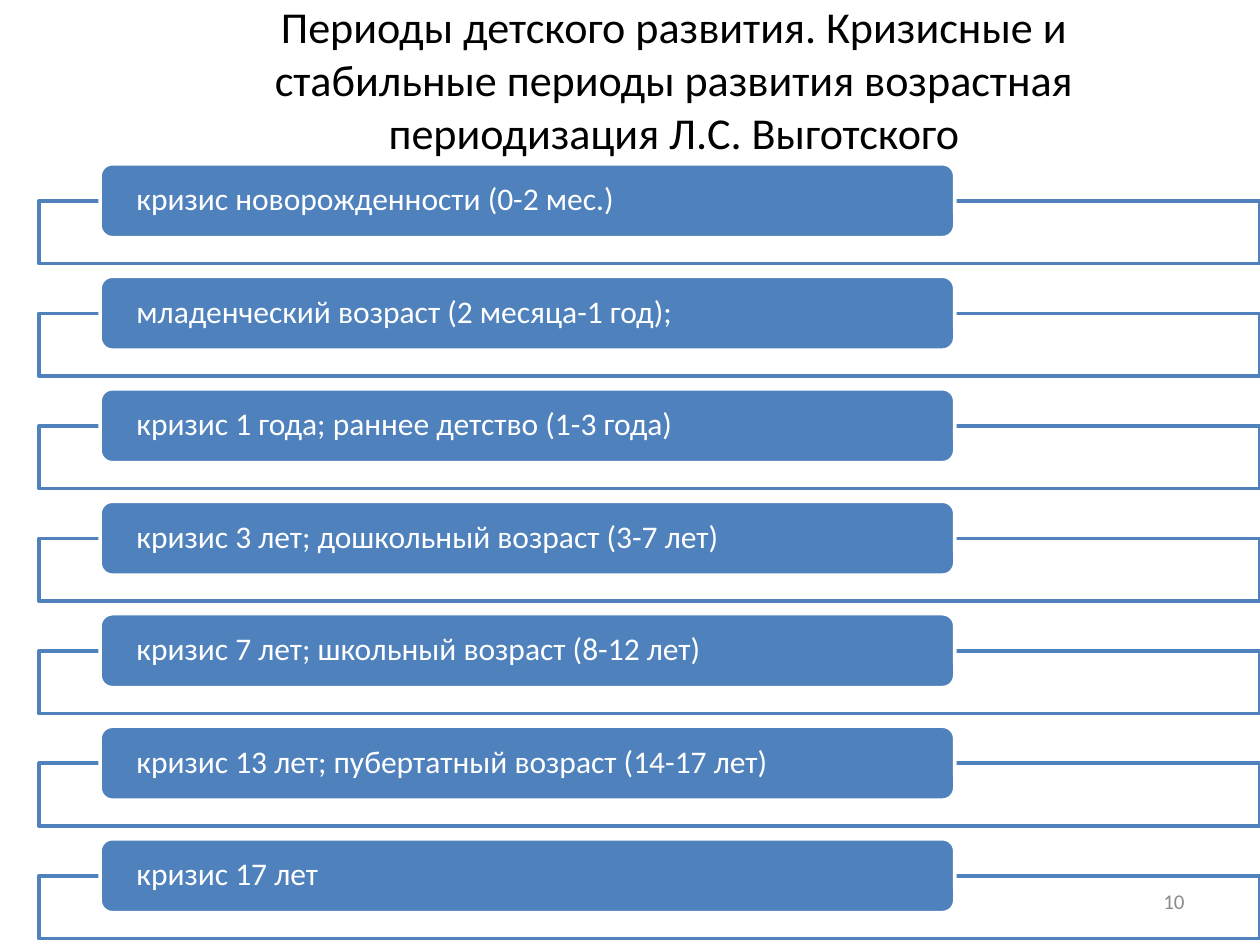
from lxml.etree import SubElement
from pptx import Presentation
from pptx.dml.color import RGBColor
from pptx.enum.shapes import MSO_SHAPE
from pptx.enum.text import MSO_ANCHOR, PP_ALIGN
from pptx.oxml.ns import qn
from pptx.util import Inches, Pt

BLUE = RGBColor(0x4F, 0x81, 0xBD)
WHITE = RGBColor(0xFF, 0xFF, 0xFF)
BLACK = RGBColor(0, 0, 0)
GREY = RGBColor(0x8C, 0x8C, 0x8C)
FONT = "Calibri"

TITLE = ("Периоды детского развития. Кризисные и стабильные периоды развития "
         "возрастная периодизация Л.С. Выготского")
PERIODS = [
    "кризис новорожденности (0-2 мес.)",
    "младенческий возраст (2 месяца-1 год);",
    "кризис 1 года; раннее детство (1-3 года)",
    "кризис 3 лет; дошкольный возраст (3-7 лет)",
    "кризис 7 лет; школьный возраст (8-12 лет)",
    "кризис 13 лет; пубертатный возраст (14-17 лет)",
    "кризис 17 лет",
]


def write(s, text, size, color, align):
    tf = s.text_frame
    tf.word_wrap = True
    tf.vertical_anchor = MSO_ANCHOR.MIDDLE
    p = tf.paragraphs[0]
    p.text = text
    p.alignment = align
    p.font.name, p.font.size, p.font.color.rgb = FONT, Pt(size), color
    return tf


def add_text(slide, box, text, size, color, align):
    write(slide.shapes.add_textbox(*map(Inches, box)), text, size, color, align)


def add_box(slide, kind, box, fill, line):
    s = slide.shapes.add_shape(kind, *map(Inches, box))
    s.shadow.inherit = False
    s.fill.solid()
    s.fill.fore_color.rgb = fill
    s.line.color.rgb = line
    s.line.width = Pt(2)
    return s


def add_period(slide, box, text):
    """An open frame with a label bar that overlaps its top edge."""
    left, top, width, height = box
    label_h = height * 0.74
    frame_top = label_h / 2
    frame = add_box(slide, MSO_SHAPE.RECTANGLE,
                    (left, top + frame_top, width, height - frame_top), WHITE, BLUE)
    color = frame.fill._xPr.find(qn("a:solidFill"))[0]
    SubElement(color, qn("a:alpha")).set("val", "90000")

    label = add_box(slide, MSO_SHAPE.ROUNDED_RECTANGLE,
                    (left + width * 0.05, top, width * 0.7, label_h), BLUE, WHITE)
    tf = write(label, text, 18, WHITE, PP_ALIGN.LEFT)
    tf.margin_left = tf.margin_right = Inches(0.26)
    tf.margin_top = tf.margin_bottom = 0
    tf.paragraphs[0].line_spacing = 0.9


def add_period_list(slide, box, periods, gap):
    left, top, width, height = box
    pitch = (height + gap) / len(periods)
    for i, text in enumerate(periods):
        add_period(slide, (left, top + i * pitch, width, pitch - gap), text)


def main():
    prs = Presentation()
    prs.slide_width, prs.slide_height = Inches(10), Inches(7.5)
    slide = prs.slides.add_slide(prs.slide_layouts[6])
    add_text(slide, (1.25, 0, 8.2, 1.25), TITLE, 25.2, BLACK, PP_ALIGN.CENTER)
    add_period_list(slide, (0.31, 1.3, 9.69, 6.15), PERIODS, gap=0.1)
    add_text(slide, (7.17, 6.95, 2.33, 0.4), "10", 12, GREY, PP_ALIGN.RIGHT)
    prs.save("out.pptx")


if __name__ == "__main__":
    main()
